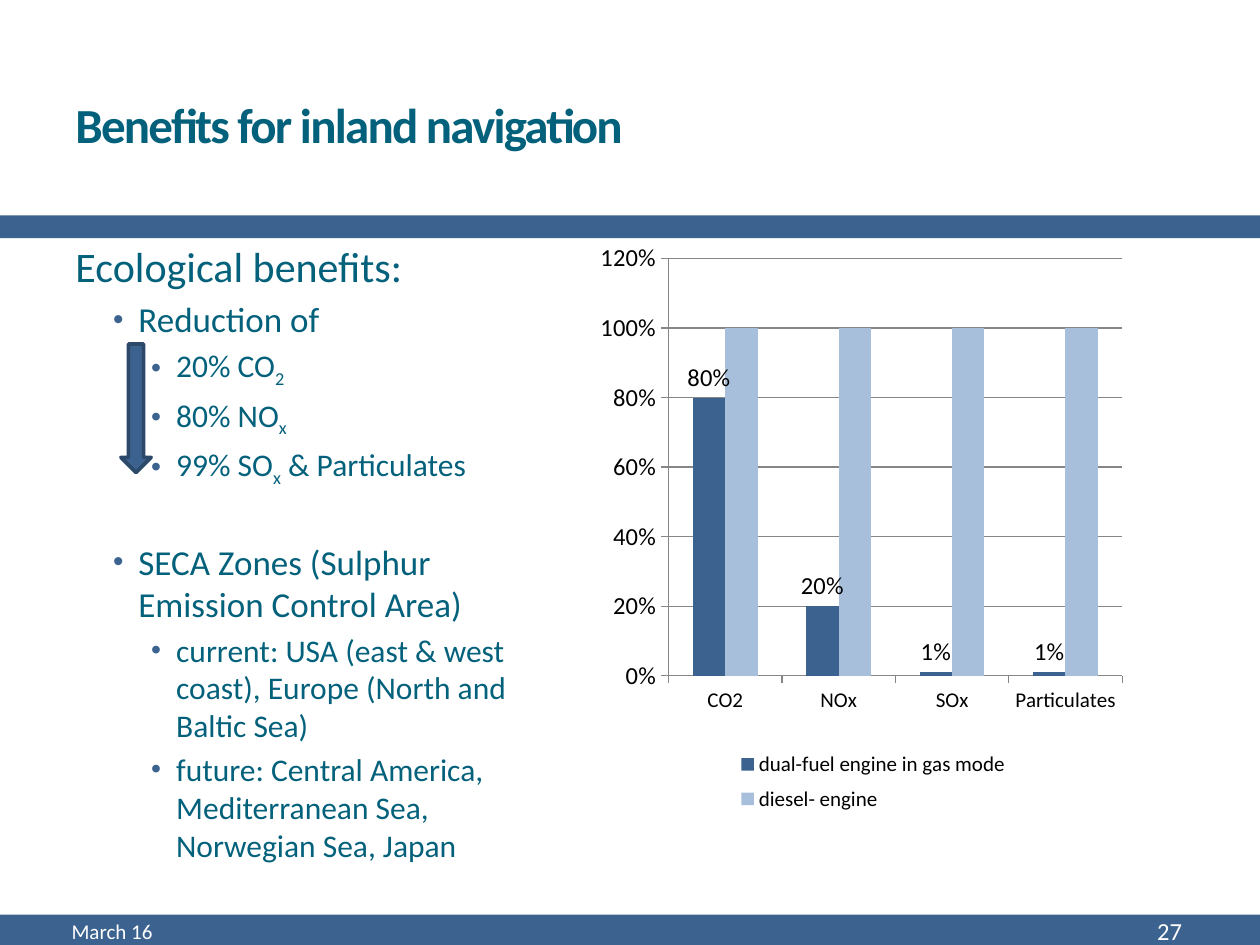
from dataclasses import dataclass

from lxml.etree import SubElement
from pptx import Presentation
from pptx.chart.data import CategoryChartData
from pptx.dml.color import RGBColor
from pptx.enum.chart import XL_CHART_TYPE as ChartType
from pptx.enum.chart import XL_LABEL_POSITION as LabelPos
from pptx.enum.chart import XL_LEGEND_POSITION as LegendPos
from pptx.enum.chart import XL_TICK_MARK as Tick
from pptx.enum.shapes import MSO_SHAPE as Shape
from pptx.enum.text import MSO_ANCHOR as Anchor
from pptx.enum.text import PP_ALIGN as Align
from pptx.oxml.ns import qn
from pptx.util import Inches, Pt


@dataclass(frozen=True)
class Theme:
    font: str = "Calibri"
    ink: str = "04617B"
    blue: str = "3C628F"
    pale: str = "A8BFDB"
    edge: str = "2C496A"
    grid: str = "868686"
    white: str = "FFFFFF"
    black: str = "000000"
    title: int = 28
    levels: tuple = (24, 20, 18)
    small: int = 12
    label: int = 14


THEME = Theme()
# Left margin in inches and bullet size in percent, by outline level
BULLETS = {1: (0.5, 85), 2: (0.8, 90)}
HANGING = 0.2
SECTION_GAP = 30

# Level, then runs; every second run is a subscript
OUTLINE = [
    (0, ["Ecological benefits:"]),
    (1, ["Reduction of"]),
    (2, ["20% CO", "2"]),
    (2, ["80% NO", "x"]),
    (2, ["99% SO", "x", " & Particulates"]),
    (1, ["SECA Zones (Sulphur Emission Control Area)"]),
    (2, ["current: USA (east & west coast), Europe (North and Baltic Sea)"]),
    (2, ["future: Central America, Mediterranean Sea, Norwegian Sea, Japan"]),
]
SECTION_START = 5

CATEGORIES = ["CO2", "NOx", "SOx", "Particulates"]
SERIES = [
    ("dual-fuel engine in gas mode", [0.8, 0.2, 0.01, 0.01], THEME.blue),
    ("diesel- engine", [1, 1, 1, 1], THEME.pale),
]


def rgb(value):
    return RGBColor.from_string(value)


def apply(target, **values):
    for name, value in values.items():
        setattr(target, name, value)


def style_font(font, size, color, bold=False):
    apply(font, name=THEME.font, size=Pt(size), bold=bold)
    font.color.rgb = rgb(color)


def add_shape(page, kind, box, fill, line=None):
    shape = page.shapes.add_shape(kind, *map(Inches, box))
    shape.shadow.inherit = False
    shape.fill.solid()
    shape.fill.fore_color.rgb = rgb(fill)
    if line:
        shape.line.color.rgb = rgb(line)
        shape.line.width = Pt(2.08)
    else:
        shape.line.fill.background()


def add_text_frame(page, box, anchor=Anchor.MIDDLE):
    frame = page.shapes.add_textbox(*map(Inches, box)).text_frame
    apply(frame, word_wrap=True, vertical_anchor=anchor)
    return frame


def add_line(page, box, text, size, color, align=Align.LEFT, bold=False):
    para = add_text_frame(page, box).paragraphs[0]
    para.alignment = align
    span = para.add_run()
    span.text = text
    style_font(span.font, size, color, bold)
    return span


def add_bullet(para, level):
    margin, percent = BULLETS[level]
    props = para._p.get_or_add_pPr()
    props.set("marL", str(Inches(margin)))
    props.set("indent", str(-Inches(HANGING)))
    color = SubElement(props, qn("a:buClr"))
    SubElement(color, qn("a:srgbClr"), val=THEME.blue)
    SubElement(props, qn("a:buSzPct"), val=str(percent * 1000))
    SubElement(props, qn("a:buFont"), typeface="Arial")
    SubElement(props, qn("a:buChar"), char="•")


def add_header(page, box):
    left, top, width, height = box
    span = add_line(page, (left + 0.5, top + 0.44, 5.21, 1.08),
                    "Benefits for inland navigation",
                    THEME.title, THEME.ink, bold=True)
    span._r.get_or_add_rPr().set("spc", "-100")
    add_shape(page, Shape.RECTANGLE,
              (left - 0.02, top + height - 0.18, width + 0.12, 0.18), THEME.blue)


def add_footer(page, box):
    left, top, width, height = box
    add_shape(page, Shape.RECTANGLE,
              (left - 0.04, top, width + 0.16, height), THEME.blue)
    add_line(page, (left + 0.47, top - 0.05, 3.17, 0.36),
             "March 16", THEME.small, THEME.white)
    add_line(page, (left + 8.31, top - 0.05, 1.17, 0.36),
             "27", THEME.label, THEME.white, Align.RIGHT)


def add_outline(page, box):
    frame = add_text_frame(page, box, Anchor.TOP)
    for index, (level, texts) in enumerate(OUTLINE):
        para = frame.add_paragraph() if index else frame.paragraphs[0]
        size = THEME.levels[level]
        if level:
            add_bullet(para, level)
        if index:
            gap = SECTION_GAP if index == SECTION_START else size * 0.2
            para.space_before = Pt(gap)
        for position, text in enumerate(texts):
            span = para.add_run()
            span.text = text
            style_font(span.font, size, THEME.ink)
            if position % 2:
                span._r.get_or_add_rPr().set("baseline", "-25000")

    # Arrow beside the reductions
    left, top = box[:2]
    add_shape(page, Shape.DOWN_ARROW,
              (left + 0.46, top + 0.87, 0.24, 1.02), THEME.blue, THEME.edge)


def set_layout(element, fractions, inner=False):
    """Place a chart part by fractions of the chart area."""
    layout = element.find(qn("c:layout"))
    if layout is None:
        layout = SubElement(element, qn("c:layout"))
        anchor = element.find(qn("c:legendPos"))
        if anchor is not None:
            anchor.addnext(layout)
        else:
            element.insert(0, layout)
    manual = SubElement(layout, qn("c:manualLayout"))
    if inner:
        SubElement(manual, qn("c:layoutTarget"), val="inner")
    for name in ("xMode", "yMode"):
        SubElement(manual, qn(f"c:{name}"), val="edge")
    for name, value in zip("xywh", fractions):
        SubElement(manual, qn(f"c:{name}"), val=str(value))


def add_emissions_chart(page, box):
    data = CategoryChartData(number_format="0%")
    data.categories = CATEGORIES
    for name, values, _ in SERIES:
        data.add_series(name, values)
    chart = page.shapes.add_chart(
        ChartType.COLUMN_CLUSTERED, *map(Inches, box), data).chart
    apply(chart, has_title=False, has_legend=True)
    style_font(chart.font, 18, THEME.black)

    # Columns
    plot = chart.plots[0]
    apply(plot, gap_width=150, overlap=0, vary_by_categories=False)
    for series, (_, _, color) in zip(plot.series, SERIES):
        series.format.fill.solid()
        series.format.fill.fore_color.rgb = rgb(color)
    labels = plot.series[0].data_labels
    apply(labels, show_value=True, number_format="0%",
          number_format_is_linked=False, position=LabelPos.OUTSIDE_END)
    style_font(labels.font, THEME.label, THEME.black)

    # Axes
    values = chart.value_axis
    apply(values, minimum_scale=0, maximum_scale=1.2, major_unit=0.2,
          has_major_gridlines=True)
    apply(values.tick_labels, number_format="0%", number_format_is_linked=False)
    values.major_gridlines.format.line.color.rgb = rgb(THEME.grid)
    for axis, size in ((values, THEME.label), (chart.category_axis, THEME.small)):
        axis.major_tick_mark = Tick.OUTSIDE
        axis.format.line.color.rgb = rgb(THEME.grid)
        style_font(axis.tick_labels.font, size, THEME.black)

    # Legend and plot placement
    apply(chart.legend, position=LegendPos.RIGHT, include_in_layout=False)
    style_font(chart.legend.font, THEME.small, THEME.black)
    set_layout(chart.legend._element, (0.14, 0.84, 0.4, 0.13))
    plot_area = chart._chartSpace.find(".//" + qn("c:plotArea"))
    set_layout(plot_area, (0.11, 0.04, 0.51, 0.69), inner=True)


def main():
    deck = Presentation()
    apply(deck, slide_width=Inches(10), slide_height=Inches(7.5))
    page = deck.slides.add_slide(deck.slide_layouts[6])
    add_footer(page, (0, 7.26, 10, 0.5))
    add_header(page, (0, 0, 10, 1.89))
    add_outline(page, (0.5, 1.86, 3.95, 5.22))
    add_emissions_chart(page, (4.53, 1.86, 7.06, 4.8))
    deck.save("out.pptx")


if __name__ == "__main__":
    main()
